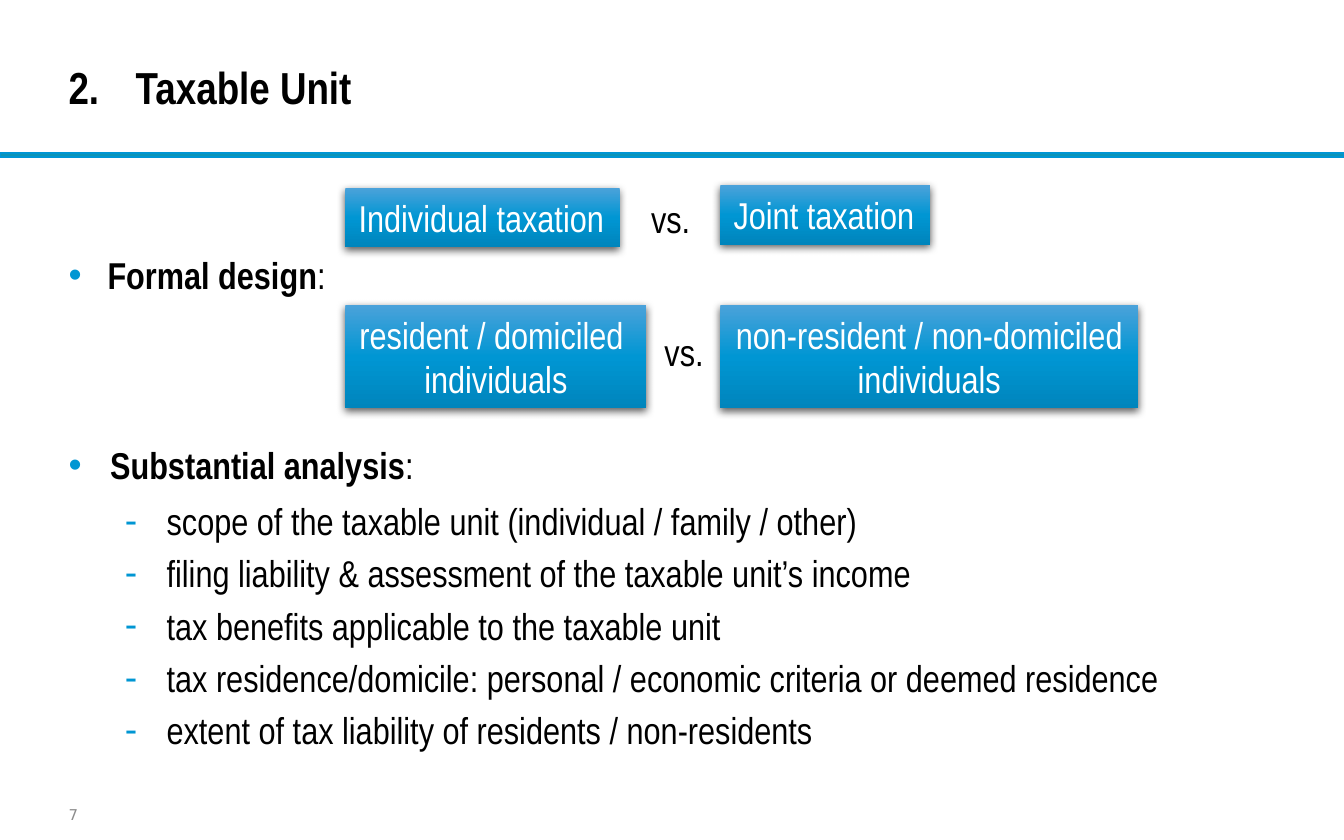
from copy import deepcopy
from lxml.etree import SubElement as Sub
from pptx import Presentation
from pptx.dml.color import RGBColor
from pptx.enum.shapes import MSO_SHAPE as Form
from pptx.enum.text import MSO_ANCHOR as Anchor, MSO_AUTO_SIZE as Auto, PP_ALIGN as Align
from pptx.oxml.ns import qn
from pptx.util import Inches, Pt

COLS, ROWS = 100, 62.5
BLUE, BLACK, WHITE, GREY = "0096D3", "000000", "FFFFFF", "8C8C8C"
GLOSS = {0: "4BA2DA", 0.5: BLUE, 1: "0085BC"}
LEFT, NEAR, FAR, WIDE = 5.1, 25.7, 53.6, 84.9


def tint(code):
    """Turn a hex string into a colour."""
    return RGBColor.from_string(code)


def apply(item, form):
    """Set each attribute named in a dict."""
    for name, value in form.items():
        setattr(item, name, value)


class Deck:
    """Holds the style and the current slide."""

    def __init__(self):
        """Start a deck with one title-only slide."""
        self.deck = Presentation()
        apply(self.deck, {"slide_width": Inches(10), "slide_height": Inches(6.25)})
        self.slide = self.deck.slides.add_slide(self.deck.slide_layouts[5])
        self.base = {"name": "Arial Narrow", "size": Pt(20), "bold": False}

    def place(self, x, y, w, h):
        """Turn grid columns and rows into lengths."""
        dx, dy = self.deck.slide_width / COLS, self.deck.slide_height / ROWS
        return int(x * dx), int(y * dy), int(w * dx), int(h * dy)

    def say(self, para, text, ink=BLACK, **form):
        """Add one styled run."""
        run = para.add_run()
        run.text = text
        apply(run.font, {**self.base, **form})
        run.font.color.rgb = tint(ink)

    def mark(self, para, kind, indent, hang, **attrs):
        """Give a paragraph a hanging bullet or number."""
        props = para._p.get_or_add_pPr()
        props.set("marL", str(Inches(indent)))
        props.set("indent", str(-Inches(hang)))
        if kind == "buChar":
            Sub(Sub(props, qn("a:buClr")), qn("a:srgbClr"), val=BLUE)
            Sub(props, qn("a:buFont"), typeface="Arial")
        Sub(props, qn("a:" + kind), **attrs)

    def title(self, text, start, *area):
        """Move and format the title with its number."""
        shape = self.slide.shapes.title
        apply(shape, dict(zip(("left", "top", "width", "height"), self.place(*area))))
        frame = shape.text_frame
        sides = ("margin_left", "margin_top", "margin_right", "margin_bottom")
        apply(frame, {**dict.fromkeys(sides, 0), "vertical_anchor": Anchor.MIDDLE,
                      "auto_size": Auto.NONE, "word_wrap": True})
        para = frame.paragraphs[0]
        self.mark(para, "buAutoNum", 0.5, 0.5, type="arabicPeriod", startAt=str(start))
        para.alignment = Align.LEFT
        self.say(para, text, size=Pt(24), bold=True)

    def bar(self, *area):
        """Draw the rule below the title."""
        shape = self.slide.shapes.add_shape(Form.RECTANGLE, *self.place(*area))
        shape.shadow.inherit = False
        shape.fill.solid()
        shape.fill.fore_color.rgb = tint("0C94B7")
        shape.line.color.rgb = tint(BLUE)
        shape.line.width = Pt(1)

    def frame(self, *area, **form):
        """Add a wrapping text frame."""
        frame = self.slide.shapes.add_textbox(*self.place(*area)).text_frame
        apply(frame, {"word_wrap": True, **form})
        return frame

    def points(self, head, items, hang, top, *area):
        """List a bold heading and its dashed items."""
        frame = self.frame(*area, margin_left=0, margin_right=0, margin_top=Inches(top))
        para = frame.paragraphs[0]
        self.mark(para, "buChar", hang, hang, char="•")
        para.space_after = Pt(6)
        self.say(para, head, bold=True)
        self.say(para, ":")
        for item in items:
            para = frame.add_paragraph()
            self.mark(para, "buChar", 0.73, 0.31, char="-")
            apply(para, {"level": 1, "space_after": Pt(4)})
            self.say(para, item)

    def label(self, text, *area):
        """Add a centred word between two boxes."""
        para = self.frame(*area).paragraphs[0]
        para.alignment = Align.CENTER
        self.say(para, text)

    def number(self, text, *area):
        """Add the page number."""
        frame = self.frame(*area, margin_left=0, margin_right=0,
                           vertical_anchor=Anchor.MIDDLE)
        self.say(frame.paragraphs[0], text, GREY, name="DejaVu Sans", size=Pt(8))

    def box(self, lines, align, wrap, *area):
        """Add a glossy box with a soft shadow."""
        shape = self.slide.shapes.add_shape(Form.RECTANGLE, *self.place(*area))
        shape.line.fill.background()
        shape.fill.gradient()
        shape.fill.gradient_angle = 270
        stops = shape._element.spPr.find(".//" + qn("a:gsLst"))
        stops.append(deepcopy(stops[0]))
        for stop, (spot, code) in zip(shape.fill.gradient_stops, GLOSS.items()):
            stop.position = spot
            stop.color.rgb = tint(code)
        shape.shadow.inherit = False
        glow = Sub(shape._element.spPr.find(qn("a:effectLst")), qn("a:outerShdw"),
                   blurRad=str(Pt(4.5)), dist=str(Pt(1.5)), dir="5400000", rotWithShape="0")
        Sub(Sub(glow, qn("a:srgbClr"), val=BLACK), qn("a:alpha"), val="63000")
        frame = shape.text_frame
        apply(frame, {"word_wrap": wrap, "auto_size": Auto.SHAPE_TO_FIT_TEXT,
                      "vertical_anchor": Anchor.TOP})
        for i, line in enumerate(lines):
            para = frame.add_paragraph() if i else frame.paragraphs[0]
            para.alignment = align
            self.say(para, line, WHITE)


def main():
    """Build the slide and save it."""
    deck = Deck()
    deck.bar(0, 11.4, COLS, 0.3)
    deck.title("Taxable Unit", 2, LEFT, 1.5, 74.8, 9.9)
    deck.points("Formal design", [], 0.29, 0.4, LEFT, 14.8, WIDE, 18.3)
    deck.number("7", LEFT, 59.2, 9.8, 2.8)
    deck.points("Substantial analysis", [
        "scope of the taxable unit (individual / family / other)",
        "filing liability & assessment of the taxable unit’s income",
        "tax benefits applicable to the taxable unit",
        "tax residence/domicile: personal / economic criteria or deemed residence",
        "extent of tax liability of residents / non-residents",
    ], 0.31, 0.05, LEFT, 32.4, WIDE, 25.9)
    for x, y in ((46.5, 14.1), (47.5, 24)):
        deck.label("vs.", x, y, 6.8, 4.4)
    deck.box(["Individual taxation"], Align.LEFT, False, NEAR, 14, 20.4, 4.4)
    deck.box(["Joint taxation"], Align.LEFT, False, FAR, 13.8, 15.6, 4.4)
    deck.box(["resident / domiciled ", "individuals"], Align.CENTER, False,
             NEAR, 22.7, 22.4, 7.7)
    deck.box(["non-resident / non-domiciled individuals"], Align.CENTER, True,
             FAR, 22.7, 31.1, 7.7)
    deck.deck.save("out.pptx")


if __name__ == "__main__":
    main()
